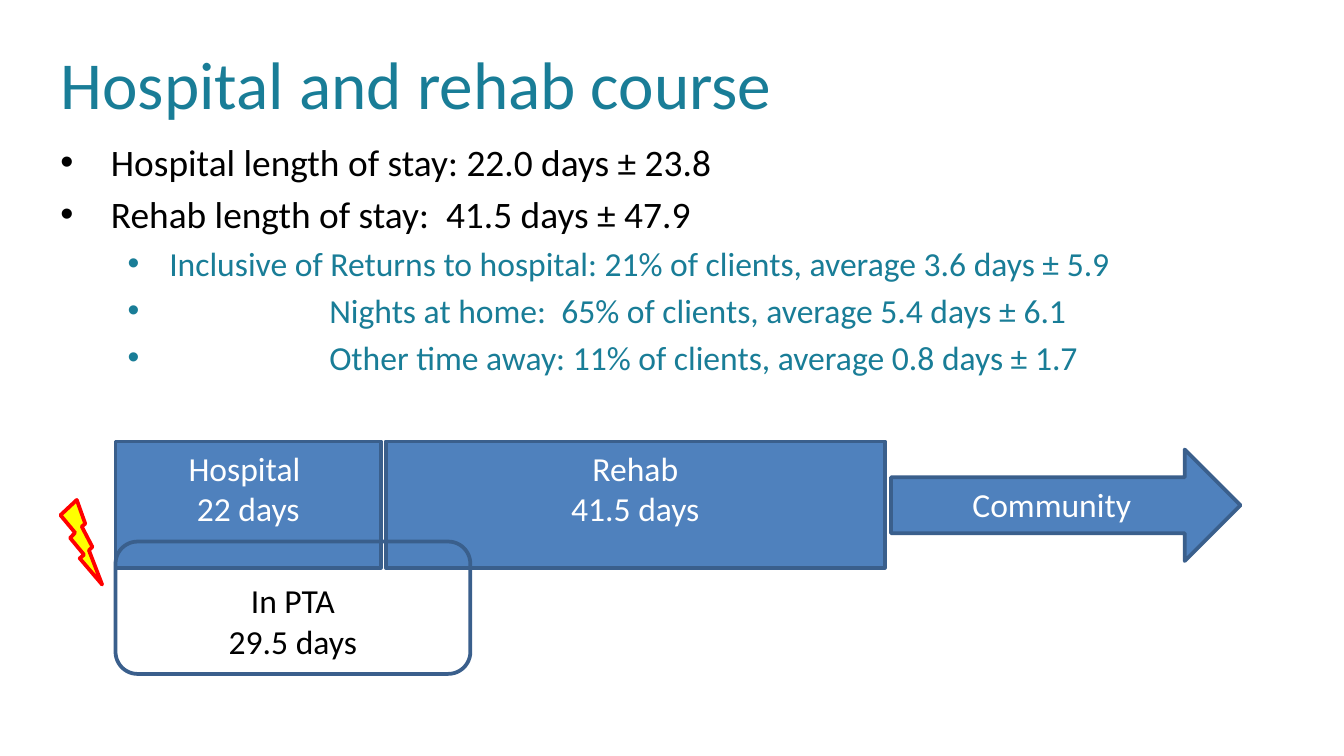
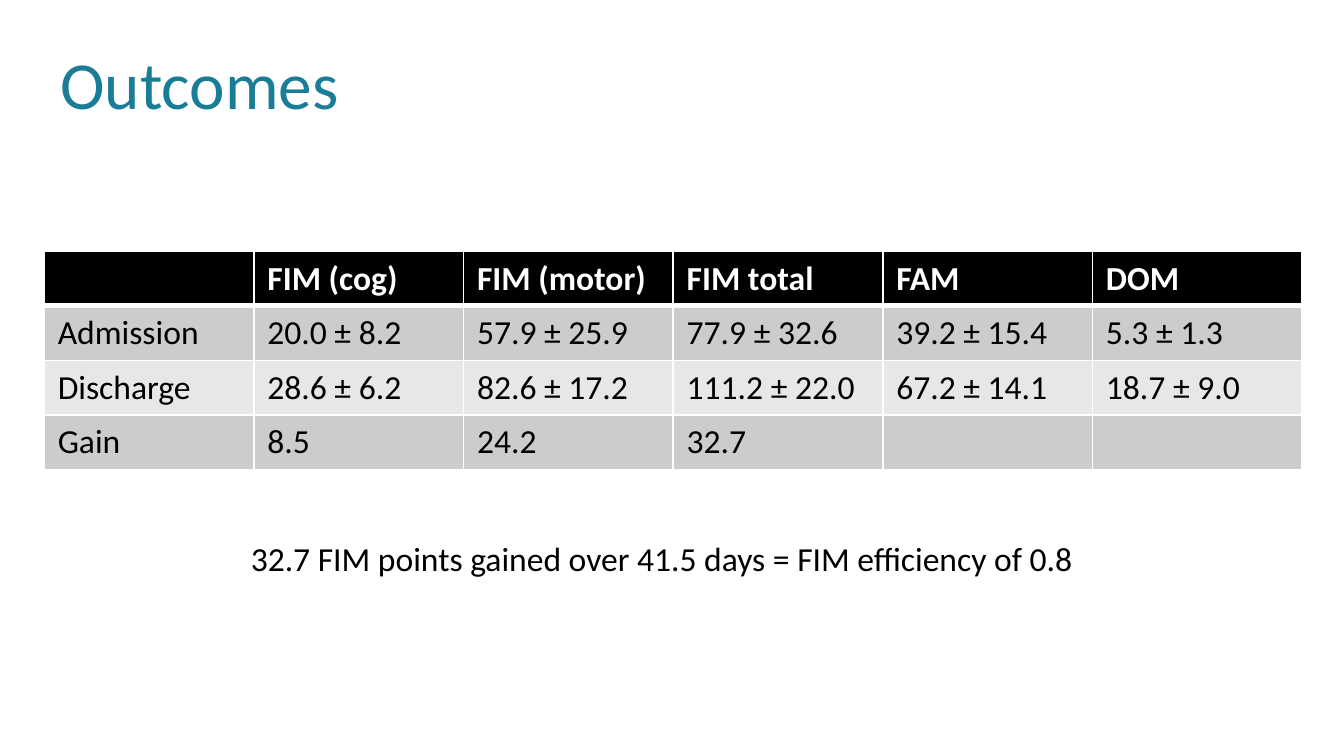
from dataclasses import dataclass

from lxml import etree
from pptx import Presentation
from pptx.dml.color import RGBColor
from pptx.enum.shapes import MSO_SHAPE
from pptx.enum.text import MSO_ANCHOR, MSO_AUTO_SIZE, PP_ALIGN
from pptx.oxml.ns import qn
from pptx.util import Emu, Pt

RECT, ROUND_RECT = MSO_SHAPE.RECTANGLE, MSO_SHAPE.ROUNDED_RECTANGLE
BOLT, ARROW = MSO_SHAPE.LIGHTNING_BOLT, MSO_SHAPE.RIGHT_ARROW
TOP, MIDDLE, BOTTOM = MSO_ANCHOR.TOP, MSO_ANCHOR.MIDDLE, MSO_ANCHOR.BOTTOM
LEFT, CENTER = PP_ALIGN.LEFT, PP_ALIGN.CENTER
NO_FIT, GROW = MSO_AUTO_SIZE.NONE, MSO_AUTO_SIZE.SHAPE_TO_FIT_TEXT

# Shared look
FONT = "Calibri"
TEAL, BLACK, WHITE = "197D97", "000000", "FFFFFF"
BLUE, NAVY, YELLOW, RED = "4F81BD", "3A5F8C", "FFFF00", "FF0000"
BANDS = ("CCCCCC", "E7E7E7")
EMU_PER_PX = 4572  # 200 px to the inch
TAB_WIDTH = 200
TITLE_ONLY, TITLE_AND_BODY = 5, 1


@dataclass
class Box:
    x: int
    y: int
    w: int
    h: int


@dataclass
class Level:
    size: int
    color: str
    margin: int
    hang: int


@dataclass
class Stage:
    kind: int
    box: Box
    lines: tuple[str, ...] = ()
    fill: str | None = BLUE
    line: str = NAVY
    color: str = WHITE
    anchor: int = TOP


TITLE_BOX = Box(70, 46, 1480, 154)
LEVELS = (Level(20, BLACK, 75, 75), Level(18, TEAL, 162, 62))

COURSE = (
    (0, "Hospital length of stay: 22.0 days ± 23.8"),
    (0, "Rehab length of stay:  41.5 days ± 47.9"),
    (1, "Inclusive of Returns to hospital: 21% of clients, average 3.6 days ± 5.9"),
    (1, "\t\tNights at home:  65% of clients, average 5.4 days ± 6.1"),
    (1, "\t\tOther time away: 11% of clients, average 0.8 days ± 1.7"),
)
STAGES = (
    Stage(RECT, Box(172, 657, 395, 188), ("Hospital ", "22 days")),
    Stage(RECT, Box(574, 657, 743, 188), ("Rehab", "41.5 days")),
    Stage(ROUND_RECT, Box(172, 806, 528, 197), ("In PTA", "29.5 days"),
          fill=None, color=BLACK, anchor=BOTTOM),
    Stage(BOLT, Box(90, 744, 62, 126), fill=YELLOW, line=RED),
    Stage(ARROW, Box(1326, 669, 520, 166), ("Community",)),
)
OUTCOMES = (
    ("", "FIM (cog)", "FIM (motor)", "FIM total", "FAM", "DOM"),
    ("Admission", "20.0 ± 8.2", "57.9 ± 25.9", "77.9 ± 32.6", "39.2 ± 15.4", "5.3 ± 1.3"),
    ("Discharge", "28.6 ± 6.2", "82.6 ± 17.2", "111.2 ± 22.0", "67.2 ± 14.1", "18.7 ± 9.0"),
    ("Gain", "8.5", "24.2", "32.7", "", ""),
)


def px(n: int) -> Emu:
    return Emu(n * EMU_PER_PX)


def rgb(color: str) -> RGBColor:
    return RGBColor.from_string(color)


def frame(box: Box) -> tuple[Emu, Emu, Emu, Emu]:
    return px(box.x), px(box.y), px(box.w), px(box.h)


def place(sp, box: Box) -> None:
    sp.left, sp.top, sp.width, sp.height = frame(box)


def add_run(p, text: str, size: int, color: str, bold: bool = False) -> None:
    r = p.add_run()
    r.text = text
    r.font.name, r.font.size, r.font.bold = FONT, Pt(size), bold
    r.font.color.rgb = rgb(color)


def next_paragraph(tf, i: int):
    return tf.add_paragraph() if i else tf.paragraphs[0]


def add_slide(prs, layout: int, title: str):
    s = prs.slides.add_slide(prs.slide_layouts[layout])
    sp = s.shapes.title
    place(sp, TITLE_BOX)
    tf = sp.text_frame
    tf.auto_size, tf.vertical_anchor = NO_FIT, MIDDLE
    p = tf.paragraphs[0]
    p.alignment = LEFT
    add_run(p, title, 36, TEAL)
    return s


def fill_list(sp, box: Box, items: tuple[tuple[int, str], ...]) -> None:
    place(sp, box)
    tf = sp.text_frame
    tf.auto_size = NO_FIT
    for i, (depth, text) in enumerate(items):
        level = LEVELS[depth]
        p = next_paragraph(tf, i)
        p.level = depth
        if i == 0:
            p.space_before = Pt(0)
        pPr = p._p.get_or_add_pPr()
        pPr.set("marL", str(px(level.margin)))
        pPr.set("indent", str(-px(level.hang)))
        pPr.set("defTabSz", str(px(TAB_WIDTH)))
        etree.SubElement(pPr, qn("a:buFont"), typeface="Arial")
        etree.SubElement(pPr, qn("a:buChar"), char="•")
        add_run(p, text, level.size, level.color)


def add_stage(s, stage: Stage) -> None:
    sp = s.shapes.add_shape(stage.kind, *frame(stage.box))
    sp.shadow.inherit = False
    if stage.fill:
        sp.fill.solid()
        sp.fill.fore_color.rgb = rgb(stage.fill)
    else:
        sp.fill.background()
    sp.line.color.rgb = rgb(stage.line)
    sp.line.width = Pt(2)
    tf = sp.text_frame
    tf.word_wrap, tf.vertical_anchor = True, stage.anchor
    for i, text in enumerate(stage.lines):
        p = next_paragraph(tf, i)
        p.alignment = CENTER
        add_run(p, text, 18, stage.color)


def set_borders(cell, top: int, bottom: int) -> None:
    tcPr = cell._tc.get_or_add_tcPr()
    for side, width in (("L", 1), ("R", 1), ("T", top), ("B", bottom)):
        ln = etree.SubElement(tcPr, qn(f"a:ln{side}"), w=str(Pt(width)))
        fill = etree.SubElement(ln, qn("a:solidFill"))
        etree.SubElement(fill, qn("a:srgbClr"), val=WHITE)


def add_grid(s, x: int, y: int, col_w: int, row_h: int, rows: tuple[tuple[str, ...], ...]) -> None:
    n_rows, n_cols = len(rows), len(rows[0])
    box = Box(x, y, col_w * n_cols, row_h * n_rows)
    table = s.shapes.add_table(n_rows, n_cols, *frame(box)).table
    table.horz_banding = False
    for i, row in enumerate(rows):
        header = i == 0
        for j, text in enumerate(row):
            cell = table.cell(i, j)
            set_borders(cell, top=3 if i == 1 else 1, bottom=3 if header else 1)
            cell.fill.solid()
            cell.fill.fore_color.rgb = rgb(BLACK if header else BANDS[(i - 1) % 2])
            if text:
                add_run(cell.text_frame.paragraphs[0], text, 18,
                        WHITE if header else BLACK, bold=header)


def add_caption(s, box: Box, text: str) -> None:
    tf = s.shapes.add_textbox(*frame(box)).text_frame
    tf.word_wrap, tf.auto_size = True, GROW
    p = tf.paragraphs[0]
    p.alignment = CENTER
    add_run(p, text, 18, BLACK)


def main() -> None:
    prs = Presentation()
    prs.slide_width, prs.slide_height = px(2000), px(1125)

    # Hospital and rehab timeline
    s = add_slide(prs, TITLE_AND_BODY, "Hospital and rehab course")
    fill_list(s.placeholders[1], Box(70, 197, 1830, 508), COURSE)
    for stage in STAGES:
        add_stage(s, stage)

    # Outcome scores
    s = add_slide(prs, TITLE_ONLY, "Outcomes")
    add_grid(s, 66, 374, 312, 81, OUTCOMES)
    add_caption(s, Box(150, 791, 1670, 80),
                "32.7 FIM points gained over 41.5 days = FIM efficiency of 0.8")

    prs.save("out.pptx")


if __name__ == "__main__":
    main()
